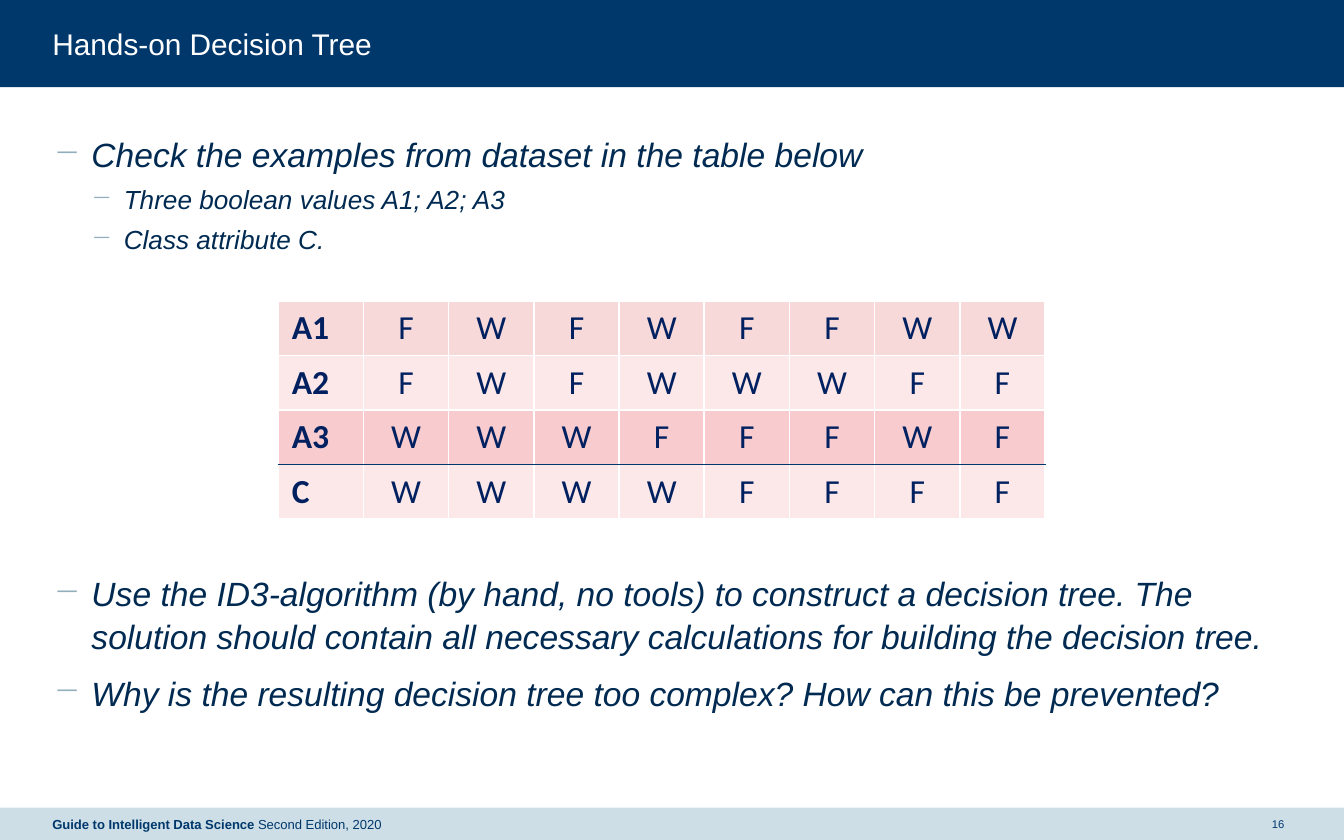
from lxml import etree
from pptx import Presentation
from pptx.dml.color import RGBColor
from pptx.enum.shapes import MSO_SHAPE
from pptx.enum.text import MSO_ANCHOR, PP_ALIGN
from pptx.oxml.ns import qn
from pptx.util import Cm, Pt

RECTANGLE = MSO_SHAPE.RECTANGLE
TOP, MIDDLE = MSO_ANCHOR.TOP, MSO_ANCHOR.MIDDLE
LEFT, CENTER = PP_ALIGN.LEFT, PP_ALIGN.CENTER

COLORS = {
    "navy": "00386C", "footer": "CDDEE7", "white": "FFFFFF", "body": "002A51",
    "dash": "92AEBC", "cell": "002060",
}
ROW_FILLS = ["F8D9DA", "FCE8E9", "F8CCCF", "FCE8E9"]
SLIDE_WIDTH, SLIDE_HEIGHT, MARGIN = 25.4, 15.88, 0.99
FOOTER_TOP, FOOTER_HEIGHT = 15.27, 0.61

TITLE = {"name": "Arial", "size": Pt(16), "color": "white"}
BOOK = {"name": "Arial", "size": Pt(7), "color": "navy", "bold": True}
EDITION = {**BOOK, "bold": False}
PAGE = {"name": "Arial", "size": Pt(6), "color": "navy"}
POINT = {"name": "Arial", "size": Pt(18), "color": "body", "italic": True}
SUBPOINT = {**POINT, "size": Pt(14)}
VALUE = {"name": "Calibri", "size": Pt(18), "color": "cell", "bold": False}
ROW_NAME = {**VALUE, "bold": True}

LEVELS = [
    {"font": POINT, "indent": (0.74, -0.71), "before": Pt(7.5)},
    {"font": SUBPOINT, "indent": (1.35, -0.61), "before": Pt(3.8)},
]
TASK_INTRO = [
    (0, "Check the examples from dataset in the table below"),
    (1, "Three boolean values A1; A2; A3"),
    (1, "Class attribute C."),
]
QUESTIONS = [
    (0, "Use the ID3-algorithm (by hand, no tools) to construct a decision tree. "
        "The solution should contain all necessary calculations for building the decision tree."),
    (0, "Why is the resulting decision tree too complex? How can this be prevented?"),
]
EXAMPLES = {"A1": "FWFWFFWW", "A2": "FWFWWWFF", "A3": "WWWFFFWF", "C": "WWWWFFFF"}


def rgb(key):
    """Return the named colour."""
    return RGBColor.from_string(COLORS[key])


def add_run(paragraph, text, style):
    """Add a run whose font follows the style."""
    run = paragraph.add_run()
    run.text = text
    for attribute, value in style.items():
        if attribute == "color":
            run.font.color.rgb = rgb(value)
        else:
            setattr(run.font, attribute, value)


def add_band(slide, top, height, color):
    """Add a plain band across the slide."""
    band = slide.shapes.add_shape(RECTANGLE, 0, Cm(top), Cm(SLIDE_WIDTH), Cm(height))
    band.shadow.inherit = False
    band.fill.solid()
    band.fill.fore_color.rgb = rgb(color)
    band.line.fill.background()


def add_frame(slide, left, top, width, height, anchor=TOP):
    """Add a wrapping text box without margins and return its text frame."""
    frame = slide.shapes.add_textbox(Cm(left), Cm(top), Cm(width), Cm(height)).text_frame
    settings = {"word_wrap": True, "vertical_anchor": anchor, "margin_left": 0,
                "margin_top": 0, "margin_right": 0, "margin_bottom": 0}
    for attribute, value in settings.items():
        setattr(frame, attribute, value)
    return frame


def add_label(slide, area, runs, anchor=TOP, alignment=LEFT):
    """Add a one-line label made of styled runs."""
    line = add_frame(slide, *area, anchor).paragraphs[0]
    line.alignment = alignment
    for text, style in runs:
        add_run(line, text, style)


def add_dash(paragraph, indent):
    """Give the paragraph a hanging dash bullet."""
    properties = paragraph._p.get_or_add_pPr()
    for attribute, length in zip(("marL", "indent"), indent):
        properties.set(attribute, str(Cm(length)))
    color = etree.SubElement(properties, qn("a:buClr"))
    etree.SubElement(color, qn("a:srgbClr"), val=COLORS["dash"])
    etree.SubElement(properties, qn("a:buChar"), char="−")


def add_points(slide, top, height, points):
    """Add a list of dashed points on their levels."""
    frame = add_frame(slide, MARGIN, top, 23.27, height)
    for index, (level, text) in enumerate(points):
        paragraph = frame.add_paragraph() if index else frame.paragraphs[0]
        layout = LEVELS[level]
        paragraph.level = level
        paragraph.line_spacing = 1.06
        paragraph.space_before = layout["before"]
        add_dash(paragraph, layout["indent"])
        add_run(paragraph, text, layout["font"])


def set_borders(cell, colors):
    """Draw one-point borders in the given colours."""
    properties = cell._tc.get_or_add_tcPr()
    for side, color in colors.items():
        line = etree.SubElement(properties, qn(f"a:ln{side}"), w=str(Pt(1)))
        fill = etree.SubElement(line, qn("a:solidFill"))
        etree.SubElement(fill, qn("a:srgbClr"), val=COLORS[color])


def add_examples(slide, left, top, column_width, row_height):
    """Add the table of examples with a rule above the class row."""
    rows, columns = len(EXAMPLES), 1 + len(EXAMPLES["C"])
    table = slide.shapes.add_table(rows, columns, Cm(left), Cm(top),
                                   Cm(column_width * columns), Cm(row_height * rows)).table
    table.first_row = table.horz_banding = False
    for column in table.columns:
        column.width = Cm(column_width)
    for row_index, (name, values) in enumerate(EXAMPLES.items()):
        table.rows[row_index].height = Cm(row_height)
        borders = dict.fromkeys("LRTB", "white")
        if row_index == rows - 2:
            borders["B"] = "navy"
        elif row_index == rows - 1:
            borders["T"] = "navy"
        for column_index, text in enumerate([name, *values]):
            cell = table.cell(row_index, column_index)
            set_borders(cell, borders)
            cell.fill.solid()
            cell.fill.fore_color.rgb = RGBColor.from_string(ROW_FILLS[row_index])
            paragraph = cell.text_frame.paragraphs[0]
            paragraph.alignment = CENTER if column_index else LEFT
            add_run(paragraph, text, VALUE if column_index else ROW_NAME)


def main():
    """Build and save the slide."""
    deck = Presentation()
    deck.slide_width, deck.slide_height = Cm(SLIDE_WIDTH), Cm(SLIDE_HEIGHT)
    slide = deck.slides.add_slide(deck.slide_layouts[6])
    add_band(slide, 0, 1.65, "navy")
    add_band(slide, FOOTER_TOP, FOOTER_HEIGHT, "footer")
    add_label(slide, (MARGIN, 0.48, 23.42, 0.69), [("Hands-on Decision Tree", TITLE)])
    add_label(slide, (23.9, FOOTER_TOP, 0.51, FOOTER_HEIGHT), [("16", PAGE)], MIDDLE, CENTER)
    add_points(slide, 2.49, 2.4, TASK_INTRO)
    add_points(slide, 10.79, 3.66, QUESTIONS)
    add_label(slide, (MARGIN, FOOTER_TOP, 11.15, FOOTER_HEIGHT),
              [("Guide to Intelligent Data Science ", BOOK), ("Second Edition, 2020", EDITION)], MIDDLE)
    add_examples(slide, 5.26, 5.69, 1.61, 1.03)
    deck.save("out.pptx")


if __name__ == "__main__":
    main()
